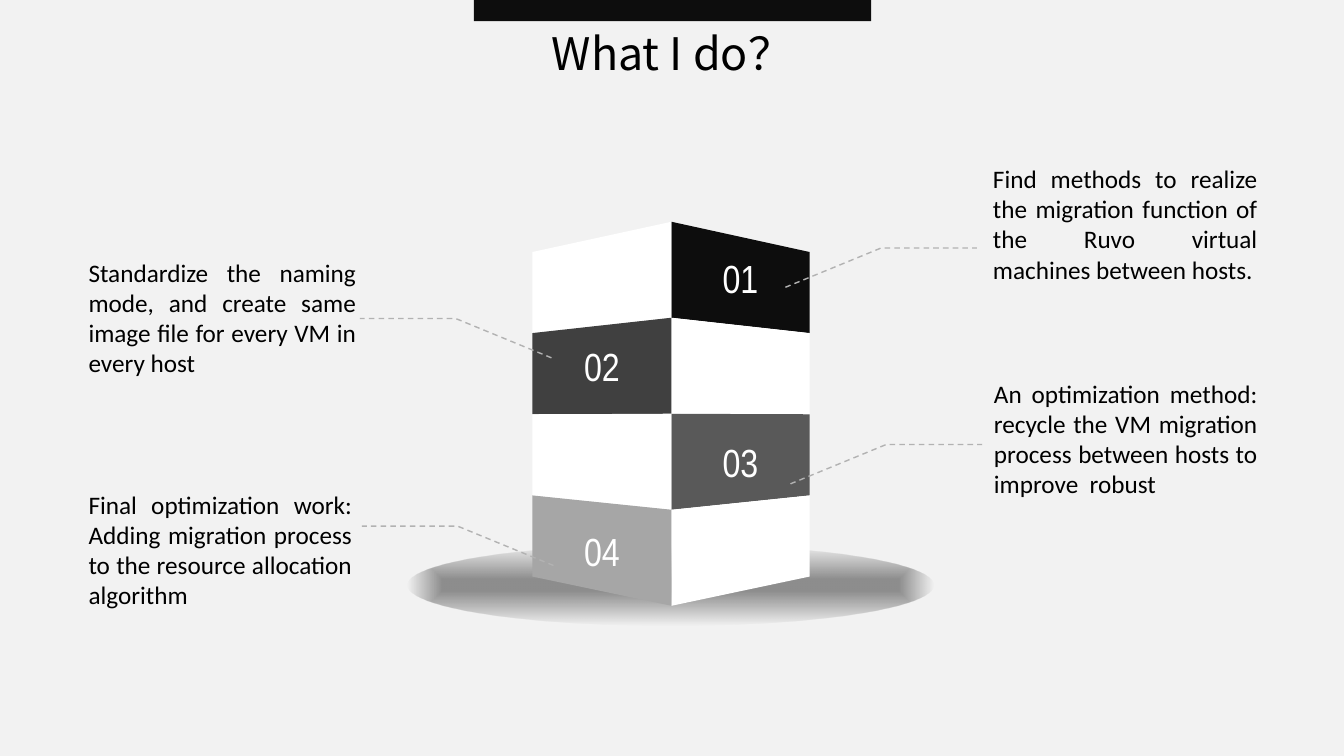
from dataclasses import dataclass

from lxml import etree
from pptx import Presentation
from pptx.dml.color import RGBColor
from pptx.enum.dml import MSO_LINE
from pptx.enum.shapes import MSO_SHAPE
from pptx.enum.text import MSO_ANCHOR, MSO_AUTO_SIZE, PP_ALIGN
from pptx.oxml import parse_xml
from pptx.oxml.ns import nsdecls, qn
from pptx.util import Inches, Pt

RECTANGLE, ELLIPSE = MSO_SHAPE.RECTANGLE, MSO_SHAPE.OVAL
CENTER, JUSTIFY = PP_ALIGN.CENTER, PP_ALIGN.JUSTIFY
MIDDLE = MSO_ANCHOR.MIDDLE
GROW = MSO_AUTO_SIZE.SHAPE_TO_FIT_TEXT
DASH = MSO_LINE.DASH


@dataclass(frozen=True)
class Theme:
    background: str = "F2F2F2"
    bar: str = "0D0D0D"
    text: str = "000000"
    blank_face: str = "FFFFFF"
    number: str = "FFFFFF"
    leader: str = "B2B2B2"
    shadow: str = "333333"
    title_font: str = "Noto Sans CJK JP"
    number_font: str = "Arial Narrow"
    body_font: str = "Calibri"
    title_size: int = 32
    number_size: int = 28
    body_size: int = 18


THEME = Theme()
TITLE = "What I do？"

# Four levels from top to bottom: number, colour, side of the numbered face
LEVELS = [
    ("01", "0D0D0D", "right"),
    ("02", "404040", "left"),
    ("03", "595959", "right"),
    ("04", "A6A6A6", "left"),
]

# Text, box (left, top, width, height), inner end of the leader, its direction
NOTES = [
    ("Find methods to realize the migration function of the Ruvo virtual machines between hosts.",
     (9.75, 1.57, 2.82, 1.31), (7.79, 2.85), 1),
    ("Standardize the naming mode, and create same image file for every VM in every host",
     (0.78, 2.5, 2.85, 1.31), (5.47, 3.55), -1),
    ("An optimization method: recycle the VM migration process between hosts to improve  robust",
     (9.76, 3.7, 2.81, 1.31), (7.84, 4.8), 1),
    ("Final optimization work: Adding migration process to the resource allocation algorithm",
     (0.78, 4.8, 2.81, 1.31), (5.49, 5.61), -1),
]

BAR_BOX = (4.7, 0, 3.94, 0.21)
TITLE_BOX = (4.7, 0.21, 3.94, 0.64)
SHADOW_BOX = (4.04, 5.4, 5.22, 0.81)

EDGE_X, EDGE_TOP, EDGE_BOTTOM = 6.66, 2.2, 6.01
OUTER_X = {"right": 8.03, "left": 5.28}
OUTER_TOP, OUTER_BOTTOM = 2.5, 5.72
LEADER_STEP, LEADER_RISE = 0.95, 0.39


def color(value):
    return RGBColor.from_string(value)


def write(frame, text, font, size, text_color, alignment):
    paragraph = frame.paragraphs[0]
    paragraph.alignment = alignment
    run = paragraph.add_run()
    run.text = text
    run.font.size = Pt(size)
    run.font.color.rgb = color(text_color)
    run.font.name = font
    east_asian = etree.SubElement(run.font._element, qn("a:ea"))
    east_asian.set("typeface", font)


def add_text(slide, box, *style):
    frame = slide.shapes.add_textbox(*map(Inches, box)).text_frame
    frame.word_wrap = True
    frame.auto_size = GROW
    write(frame, *style)


def add_plain_shape(slide, kind, box):
    shape = slide.shapes.add_shape(kind, *map(Inches, box))
    shape.shadow.inherit = False
    shape.line.fill.background()
    return shape


def add_outline(slide, points, close):
    points = [(Inches(x), Inches(y)) for x, y in points]
    builder = slide.shapes.build_freeform(*points[0])
    builder.add_line_segments(points[1:], close=close)
    shape = builder.convert_to_shape()
    shape.shadow.inherit = False
    return shape


def add_ground_shadow(slide):
    """Ellipse that fades from a dark centre to a clear rim."""
    shape = add_plain_shape(slide, ELLIPSE, SHADOW_BOX)
    stops = "".join(
        f'<a:gs pos="{position}000"><a:srgbClr val="{THEME.shadow}">'
        f'<a:alpha val="{alpha}000"/></a:srgbClr></a:gs>'
        for position, alpha in ((15, 52), (100, 0)))
    gradient = parse_xml(
        f'<a:gradFill {nsdecls("a")} rotWithShape="1"><a:gsLst>{stops}</a:gsLst>'
        '<a:path path="shape"><a:fillToRect l="50000" t="50000" r="50000" b="50000"/>'
        '</a:path></a:gradFill>')
    shape._element.spPr.find(qn("a:prstGeom")).addnext(gradient)


def add_face(slide, level, side):
    """One level of one tower side; both heights divide evenly into levels."""
    count = len(LEVELS)
    edge = [EDGE_TOP + (EDGE_BOTTOM - EDGE_TOP) * i / count for i in (level, level + 1)]
    outer = [OUTER_TOP + (OUTER_BOTTOM - OUTER_TOP) * i / count for i in (level, level + 1)]
    x = OUTER_X[side]
    corners = [(EDGE_X, edge[0]), (x, outer[0]), (x, outer[1]), (EDGE_X, edge[1])]
    face = add_outline(slide, corners, True)
    face.line.fill.background()
    number, fill, numbered_side = LEVELS[level]
    numbered = side == numbered_side
    face.fill.solid()
    face.fill.fore_color.rgb = color(fill if numbered else THEME.blank_face)
    if numbered:
        face.text_frame.vertical_anchor = MIDDLE
        write(face.text_frame, number, THEME.number_font, THEME.number_size,
              THEME.number, CENTER)


def add_leader(slide, start, direction):
    x, y = start
    bend, end = (x + direction * LEADER_STEP * n for n in (1, 2))
    leader = add_outline(slide, [start, (bend, y - LEADER_RISE), (end, y - LEADER_RISE)], False)
    leader.fill.background()
    leader.line.color.rgb = color(THEME.leader)
    leader.line.width = Pt(1)
    leader.line.dash_style = DASH


def main():
    presentation = Presentation()
    presentation.slide_width, presentation.slide_height = Inches(13.33), Inches(7.5)
    slide = presentation.slides.add_slide(presentation.slide_layouts[6])
    slide.background.fill.solid()
    slide.background.fill.fore_color.rgb = color(THEME.background)

    bar = add_plain_shape(slide, RECTANGLE, BAR_BOX)
    bar.fill.solid()
    bar.fill.fore_color.rgb = color(THEME.bar)
    add_text(slide, TITLE_BOX, TITLE, THEME.title_font, THEME.title_size, THEME.text, CENTER)

    add_ground_shadow(slide)
    for side in OUTER_X:
        for level in range(len(LEVELS)):
            add_face(slide, level, side)
    for text, box, start, direction in NOTES:
        add_leader(slide, start, direction)
        add_text(slide, box, text, THEME.body_font, THEME.body_size, THEME.text, JUSTIFY)

    presentation.save("out.pptx")


if __name__ == "__main__":
    main()
